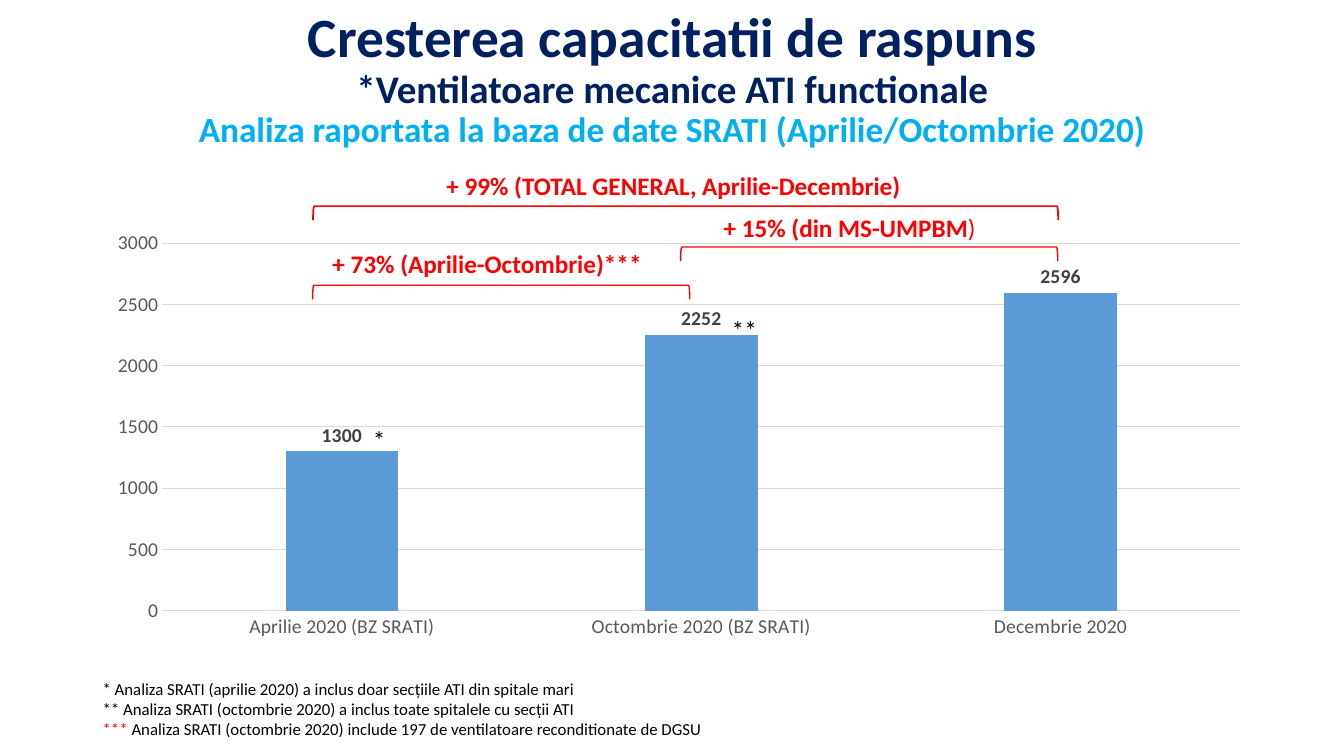
from lxml.etree import SubElement as Sub
from pptx import Presentation as Deck
from pptx.chart.data import CategoryChartData as Data
from pptx.dml.color import RGBColor as Color
from pptx.enum.chart import XL_CHART_TYPE as Kind, XL_LABEL_POSITION as Spot, XL_TICK_MARK as Tick
from pptx.enum.shapes import MSO_SHAPE as Form
from pptx.enum.text import MSO_ANCHOR as Anchor, MSO_AUTO_SIZE as Fit
from pptx.oxml.ns import qn
from pptx.util import Inches, Pt

WIDE, HIGH = Inches(13.33), Inches(7.5)
FONT = "Calibri"
HUES = {
    "navy": "002060", "sky": "00B0F0", "red": "FF0000", "black": "000000",
    "bar": "5B9BD5", "grid": "D9D9D9", "axis": "595959", "label": "404040",
}
LEFT, SPAN, LINE = 6.9, 86.25, 5.33
DEPTH = 1.87


def hue(name):
    return Color.from_string(HUES[name])


def col(share):
    return round(WIDE * share / 100)


def row(share):
    return round(HIGH * share / 100)


def area(left, top, width, height):
    return col(left), row(top), col(width), row(height)


def style(font, size, tint, bold=False):
    font.name, font.size, font.bold = FONT, Pt(size), bold
    font.color.rgb = hue(tint)


def write(para, text, size, tint, bold=False):
    run = para.add_run()
    run.text = text
    style(run.font, size, tint, bold)


def add_title(slide):
    title = slide.shapes.title
    title.left, title.top, title.width, title.height = area(LEFT, 0.93, SPAN, 19.33)
    frame = title.text_frame
    frame.word_wrap, frame.auto_size = True, Fit.NONE
    frame.vertical_anchor = Anchor.MIDDLE
    para = frame.paragraphs[0]
    para.line_spacing = 0.9
    write(para, "Cresterea capacitatii de raspuns", 39.6, "navy", True)
    para.add_line_break()
    write(para, "*Ventilatoare mecanice ATI functionale", 27.9, "navy", True)
    para.add_line_break()
    write(para, "Analiza raportata la baza de date SRATI (Aprilie/Octombrie 2020)", 25.2, "sky", True)


def set_plot(chart, **sides):
    plot = chart.plots[0]._element.getparent()
    for old in plot.findall(qn("c:layout")):
        plot.remove(old)
    layout = Sub(plot, qn("c:layout"))
    plot.insert(0, layout)
    manual = Sub(layout, qn("c:manualLayout"))
    marks = {"layoutTarget": "inner", "xMode": "edge", "yMode": "edge", **sides}
    for tag, val in marks.items():
        Sub(manual, qn(f"c:{tag}")).set("val", str(val))


def add_bars(slide):
    data = Data()
    data.categories = ["Aprilie 2020 (BZ SRATI)", "Octombrie 2020 (BZ SRATI)", "Decembrie 2020"]
    data.add_series("Ventilatoare", (1300, 2252, 2596))
    chart = slide.shapes.add_chart(
        Kind.COLUMN_CLUSTERED, *area(LEFT, 25.47, SPAN, 60.8), data).chart
    chart.has_legend = chart.has_title = False
    style(chart.font, 10, "black")
    for axis in (chart.category_axis, chart.value_axis):
        axis.major_tick_mark = axis.minor_tick_mark = Tick.NONE
        style(axis.tick_labels.font, 14, "axis")
    scale = chart.value_axis
    scale.minimum_scale, scale.maximum_scale, scale.major_unit = 0, 3000, 500
    scale.format.line.fill.background()
    for line in (chart.category_axis.format.line, scale.major_gridlines.format.line):
        line.color.rgb, line.width = hue("grid"), Pt(0.75)
    plot = chart.plots[0]
    plot.gap_width, plot.overlap, plot.vary_by_categories = 219, -27, False
    bars = plot.series[0]
    bars.format.fill.solid()
    bars.format.fill.fore_color.rgb = hue("bar")
    tags = bars.data_labels
    tags.show_value, tags.position = True, Spot.OUTSIDE_END
    style(tags.font, 14, "label", True)
    set_plot(chart, x=0.06, y=0.11, w=0.93, h=0.8)


def add_brace(slide, left, top, width, weight):
    x, y, length, depth = area(left, top, width, DEPTH)
    shift = (length - depth) // 2
    brace = slide.shapes.add_shape(Form.LEFT_BRACKET, x + shift, y - shift, depth, length)
    brace.rotation = 90
    brace.shadow.inherit = False
    brace.fill.background()
    brace.line.color.rgb, brace.line.width = hue("red"), Pt(weight)


def add_note(slide, left, top, width, runs):
    frame = slide.shapes.add_textbox(*area(left, top, width, LINE)).text_frame
    frame.word_wrap, frame.auto_size = False, Fit.SHAPE_TO_FIT_TEXT
    for text, tint, bold in runs:
        write(frame.paragraphs[0], text, 18, tint, bold)


def add_foot(slide):
    frame = slide.shapes.add_textbox(*area(LEFT, 89.07, 89.35, 9.47)).text_frame
    frame.word_wrap, frame.auto_size = True, Fit.SHAPE_TO_FIT_TEXT
    write(frame.paragraphs[0],
          "* Analiza SRATI (aprilie 2020) a inclus doar secțiile ATI din spitale mari", 12, "black")
    para = frame.add_paragraph()
    write(para, "** Analiza SRATI (octombrie 2020) a inclus toate spitalele cu secții ATI", 12, "black")
    para.add_line_break()
    write(para, "***", 12, "red")
    write(para, " Analiza SRATI (octombrie 2020) include 197 de ventilatoare reconditionate de DGSU",
          12, "black")


def main():
    deck = Deck()
    deck.slide_width, deck.slide_height = WIDE, HIGH
    slide = deck.slides.add_slide(deck.slide_layouts[5])
    add_title(slide)
    add_bars(slide)
    for brace in ((23.26, 37.73, 28.06, 1), (23.29, 27.27, 55.44, 1.25), (50.64, 32.67, 28.06, 1)):
        add_brace(slide, *brace)
    notes = (
        (24, 32.13, 24.76, [("+ 73% (Aprilie-Octombrie)***", "red", True)]),
        (53.11, 27.47, 20.48, [("+ 15% (din MS-UMPBM", "red", True), (")", "red", False)]),
        (32.48, 21.87, 35.63, [("+ 99% (TOTAL GENERAL, Aprilie-Decembrie)", "red", True)]),
        (27, 55.47, 2.48, [("*", "black", False)]),
        (53.71, 40.93, 3.38, [("**", "black", False)]),
    )
    for note in notes:
        add_note(slide, *note)
    add_foot(slide)
    deck.save("out.pptx")


if __name__ == "__main__":
    main()
